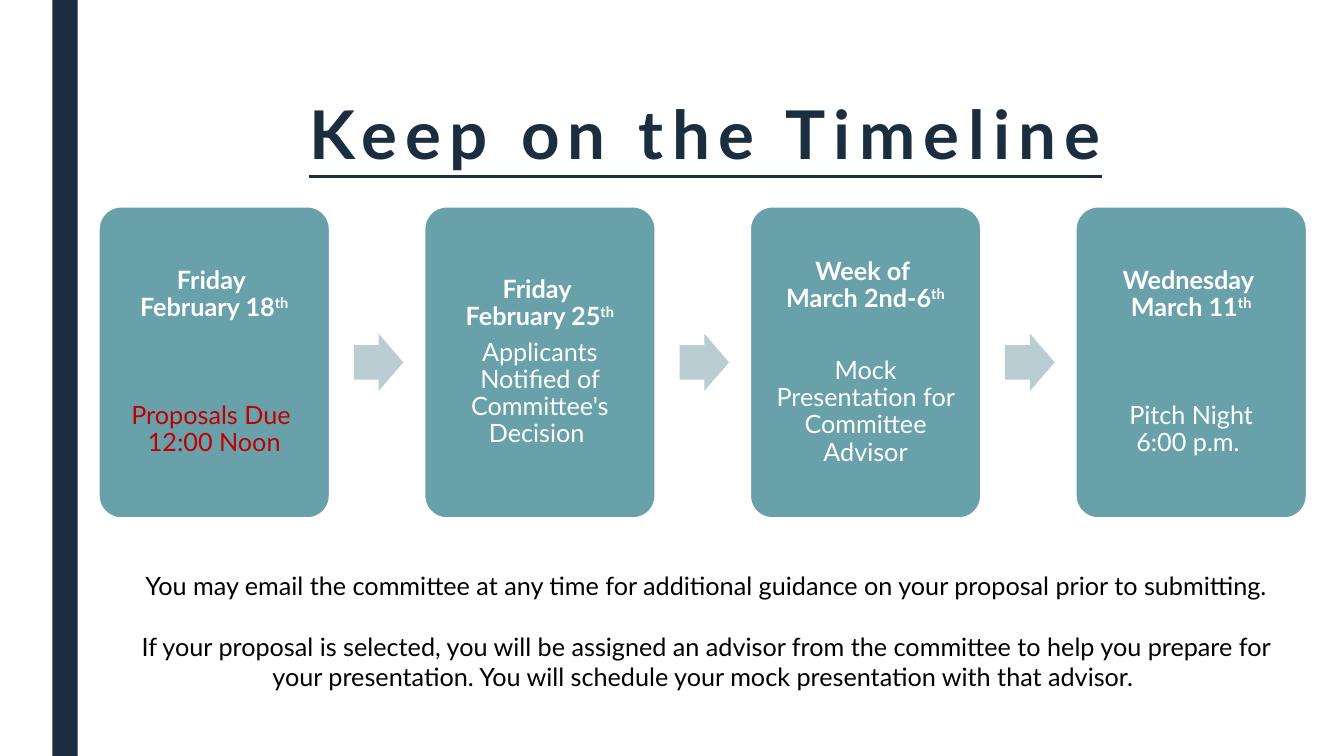
from lxml import etree
from pptx import Presentation
from pptx.dml.color import RGBColor
from pptx.enum.shapes import MSO_SHAPE
from pptx.enum.text import MSO_ANCHOR, MSO_AUTO_SIZE, PP_ALIGN
from pptx.oxml.ns import qn
from pptx.util import Inches, Pt

RECTANGLE, CARD, ARROW = (
    MSO_SHAPE.RECTANGLE, MSO_SHAPE.ROUNDED_RECTANGLE, MSO_SHAPE.RIGHT_ARROW)
CENTER = PP_ALIGN.CENTER
TOP, MIDDLE = MSO_ANCHOR.TOP, MSO_ANCHOR.MIDDLE
NO_AUTOFIT = MSO_AUTO_SIZE.NONE

NAVY = RGBColor(0x1A, 0x2E, 0x40)
TEAL = RGBColor(0x69, 0xA1, 0xAB)
PALE_TEAL = RGBColor(0xB9, 0xCD, 0xD2)
RED = RGBColor(0xC0, 0x00, 0x00)
WHITE = RGBColor(0xFF, 0xFF, 0xFF)
BLACK = RGBColor(0x00, 0x00, 0x00)

FONT = "Lato"
SLIDE_W, SLIDE_H = 13.33, 7.5

# Timeline grid, in inches: one column per step
FIRST_LEFT, COLUMN = 0.97, 3.23
CARD_TOP, CARD_W, CARD_H = 2.04, 2.31, 3.11
ARROW_OFFSET, ARROW_W, ARROW_H = 2.54, 0.49, 0.57
CARD_INSET = Inches(0.07)

# Date, what happens, colour of that text, gap between the two in points
STEPS = [
    ("Friday \nFebruary 18", "Proposals Due \n12:00 Noon", RED, 58),
    ("Friday \nFebruary 25",
     "Applicants Notified of Committee's Decision ", WHITE, 6),
    ("Week of \nMarch 2nd-6",
     "Mock Presentation for Committee Advisor", WHITE, 32),
    ("Wednesday \nMarch 11", "Pitch Night\n6:00 p.m. ", WHITE, 58),
]

ADVICE = [
    "You may email the committee at any time for additional guidance on your "
    "proposal prior to submitting.",
    "If your proposal is selected, you will be assigned an advisor from the "
    "committee to help you prepare for your presentation. You will schedule "
    "your mock presentation with that advisor. ",
]


def set_all(target, formats):
    for name, value in formats.items():
        setattr(target, name, value)


def add_text(paragraph, text, color, size=18, bold=False, underline=False):
    """Write text in runs, with a line break at each newline."""
    for number, line in enumerate(text.split("\n")):
        if number:
            paragraph.add_line_break()
        run = paragraph.add_run()
        run.text = line
        set_all(run.font, {"name": FONT, "size": Pt(size), "bold": bold,
                           "underline": underline})
        run.font.color.rgb = color
    return run


def format_paragraph(paragraph, spacing=1.0, before=0):
    set_all(paragraph, {"alignment": CENTER, "line_spacing": spacing,
                        "space_before": Pt(before), "space_after": Pt(0)})


def place(shape, left, top, width, height):
    set_all(shape, {"left": Inches(left), "top": Inches(top),
                    "width": Inches(width), "height": Inches(height)})


def prepare_frame(shape, anchor):
    set_all(shape.text_frame, {"word_wrap": True, "auto_size": NO_AUTOFIT,
                               "vertical_anchor": anchor})
    return shape.text_frame


def add_block(slide, kind, box, fill, adjustments=()):
    block = slide.shapes.add_shape(kind, *map(Inches, box))
    block.shadow.inherit = False
    block.fill.solid()
    block.fill.fore_color.rgb = fill
    block.line.fill.background()
    for number, value in enumerate(adjustments):
        block.adjustments[number] = value
    return block


def add_title(slide):
    title = slide.shapes.title
    place(title, 0.82, 0.96, 12.36, 0.93)
    heading = prepare_frame(title, TOP).paragraphs[0]
    format_paragraph(heading, 0.89)
    run = add_text(heading, "Keep on the Timeline", NAVY, 48, True, True)
    run.font._element.set("spc", "600")  # letter spacing of 6 points


def add_advice(slide):
    body = slide.placeholders[1]
    place(body, 1.23, 5.61, 11.55, 1.31)
    frame = prepare_frame(body, TOP)
    for number, sentence in enumerate(ADVICE):
        paragraph = frame.add_paragraph() if number else frame.paragraphs[0]
        format_paragraph(paragraph, before=21.6 * number)
        properties = paragraph._p.get_or_add_pPr()
        properties.set("marL", "0")
        properties.set("indent", "0")
        etree.SubElement(properties, qn("a:buNone"))
        add_text(paragraph, sentence, BLACK)


def add_step(slide, left, date, event, event_color, gap):
    card = add_block(slide, CARD, (left, CARD_TOP, CARD_W, CARD_H), TEAL, [0.1])
    card.line.color.rgb = WHITE
    card.line.width = Pt(2.75)
    frame = prepare_frame(card, MIDDLE)
    set_all(frame, dict.fromkeys(
        ("margin_left", "margin_top", "margin_right", "margin_bottom"),
        CARD_INSET))

    when = frame.paragraphs[0]
    format_paragraph(when, 0.9)
    add_text(when, date, WHITE, bold=True)
    ordinal = add_text(when, "th", WHITE, bold=True)
    ordinal.font._element.set("baseline", "30000")  # superscript

    what = frame.add_paragraph()
    format_paragraph(what, 0.9, gap)
    add_text(what, event, event_color)


def main():
    deck = Presentation()
    deck.slide_width, deck.slide_height = Inches(SLIDE_W), Inches(SLIDE_H)
    slide = deck.slides.add_slide(deck.slide_layouts[1])

    # Side bar, heading and advice
    add_block(slide, RECTANGLE, (0.52, 0, 0.25, SLIDE_H), NAVY)
    add_title(slide)
    add_advice(slide)

    # Timeline: cards with an arrow in each gap
    arrow_top = CARD_TOP + (CARD_H - ARROW_H) / 2
    for number, step in enumerate(STEPS):
        left = FIRST_LEFT + number * COLUMN
        add_step(slide, left, *step)
        if number < len(STEPS) - 1:
            add_block(slide, ARROW,
                      (left + ARROW_OFFSET, arrow_top, ARROW_W, ARROW_H),
                      PALE_TEAL, [0.6, 0.5])

    deck.save("out.pptx")


if __name__ == "__main__":
    main()
